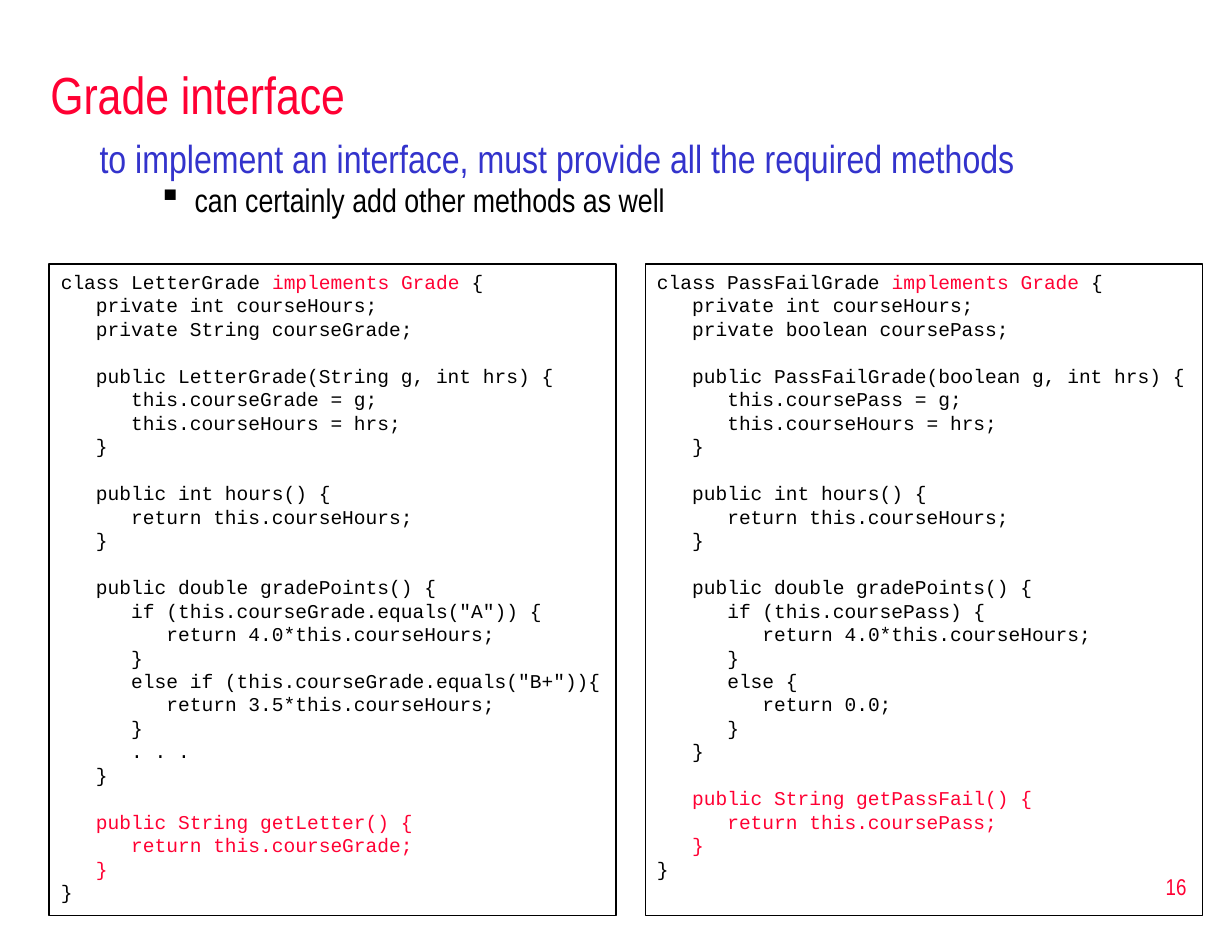
import pptx
import pptx.util
import pptx.dml.color
import pptx.enum.shapes
import pptx.enum.text
import lxml.etree

Inches, Pt = pptx.util.Inches, pptx.util.Pt
ALIGN, ANCHOR = pptx.enum.text.PP_ALIGN, pptx.enum.text.MSO_ANCHOR
COLORS = {"red": "FF0033", "blue": "3333CC", "black": "000000"}
NARROW, MONO = "Arial Narrow", "Courier New"
CODE_LINE = Pt(14.4)
INDENT = 3  # spaces per code level

deck = pptx.Presentation()
deck.slide_width, deck.slide_height = Inches(10.5), Inches(8)
slide = deck.slides.add_slide(deck.slide_layouts[6])


def add_run(paragraph, text, size, color, font=NARROW):
    run = paragraph.add_run()
    run.text = text
    run.font.size = Pt(size)
    run.font.name = font
    run.font.color.rgb = pptx.dml.color.RGBColor.from_string(COLORS[color])


def add_frame(left, top, width, height, anchor=ANCHOR.TOP):
    """Add a wrapping text box and return its text frame."""
    box = slide.shapes.add_textbox(Inches(left), Inches(top), Inches(width), Inches(height))
    box.text_frame.word_wrap = True
    box.text_frame.vertical_anchor = anchor
    return box.text_frame


number = add_frame(8.02, 7.29, 2.19, 0.53, ANCHOR.MIDDLE).paragraphs[0]
number.alignment = ALIGN.RIGHT
add_run(number, "16", 14, "red")

title = add_frame(0.33, 0.42, 9.92, 0.75, ANCHOR.MIDDLE).paragraphs[0]
add_run(title, "Grade interface", 32, "red")

body = add_frame(0.75, 1.17, 9.52, 0.92)
rule, remark = body.paragraphs[0], body.add_paragraph()
add_run(rule, "to implement an interface, must provide all the required methods", 24, "blue")
add_run(remark, "can certainly add other methods as well", 20, "black")
for point, size in ((rule, 24), (remark, 20)):
    point.line_spacing = 0.8
    point.space_before = Pt(size * 0.2)
remark_props = remark._p.get_or_add_pPr()
remark_props.set("marL", str(Inches(0.81)))
remark_props.set("indent", str(Inches(-0.31)))
bullet = lxml.etree.SubElement(remark_props, pptx.oxml.ns.qn("a:buChar"))
bullet.set("char", "▪")

LETTER_POINTS = """\
      if (this.courseGrade.equals("A")) {
         return 4.0*this.courseHours;
      }
      else if (this.courseGrade.equals("B+")){
         return 3.5*this.courseHours;
      }
      . . ."""
PASS_POINTS = """\
      if (this.coursePass) {
         return 4.0*this.courseHours;
      }
      else {
         return 0.0;
      }"""

# left, width, class name, field type, field, getter, body of gradePoints
classes = [
    (0.42, 4.83, "LetterGrade", "String", "courseGrade", "getLetter", LETTER_POINTS),
    (5.5, 4.75, "PassFailGrade", "boolean", "coursePass", "getPassFail", PASS_POINTS),
]

for left, width, name, kind, field, getter, points in classes:
    code = f"""\
class {name} implements Grade {{
   private int courseHours;
   private {kind} {field};

   public {name}({kind} g, int hrs) {{
      this.{field} = g;
      this.courseHours = hrs;
   }}

   public int hours() {{
      return this.courseHours;
   }}

   public double gradePoints() {{
{points}
   }}

   public String {getter}() {{
      return this.{field};
   }}
}}"""
    panel = slide.shapes.add_shape(
        pptx.enum.shapes.MSO_SHAPE.RECTANGLE,
        Inches(left), Inches(2.25), Inches(width), Inches(5.55))
    panel.shadow.inherit = False
    panel.fill.background()
    panel.line.color.rgb = pptx.dml.color.RGBColor.from_string(COLORS["black"])
    panel.line.width = Pt(1)
    listing = panel.text_frame
    listing.word_wrap = True
    listing.vertical_anchor = ANCHOR.TOP

    paragraph = listing.paragraphs[0]
    members = code.split("\n\n")
    for member in members:
        for row, line in enumerate(member.split("\n")):
            if line != members[0].split("\n")[0]:
                paragraph = listing.add_paragraph()
            statement = line.lstrip()
            level = (len(line) - len(statement)) // INDENT
            paragraph.alignment = ALIGN.LEFT
            paragraph.line_spacing = CODE_LINE
            paragraph._p.get_or_add_pPr().set("marL", str(Inches(0.3 * level)))
            if row == 0 and member != members[0]:
                paragraph.space_before = CODE_LINE
            before, clause, after = statement.partition("implements Grade ")
            color = "red" if member == members[-1] and level else "black"
            add_run(paragraph, before, 12, color, MONO)
            if clause:
                add_run(paragraph, clause, 12, "red", MONO)
                add_run(paragraph, after, 12, color, MONO)

deck.save("out.pptx")
